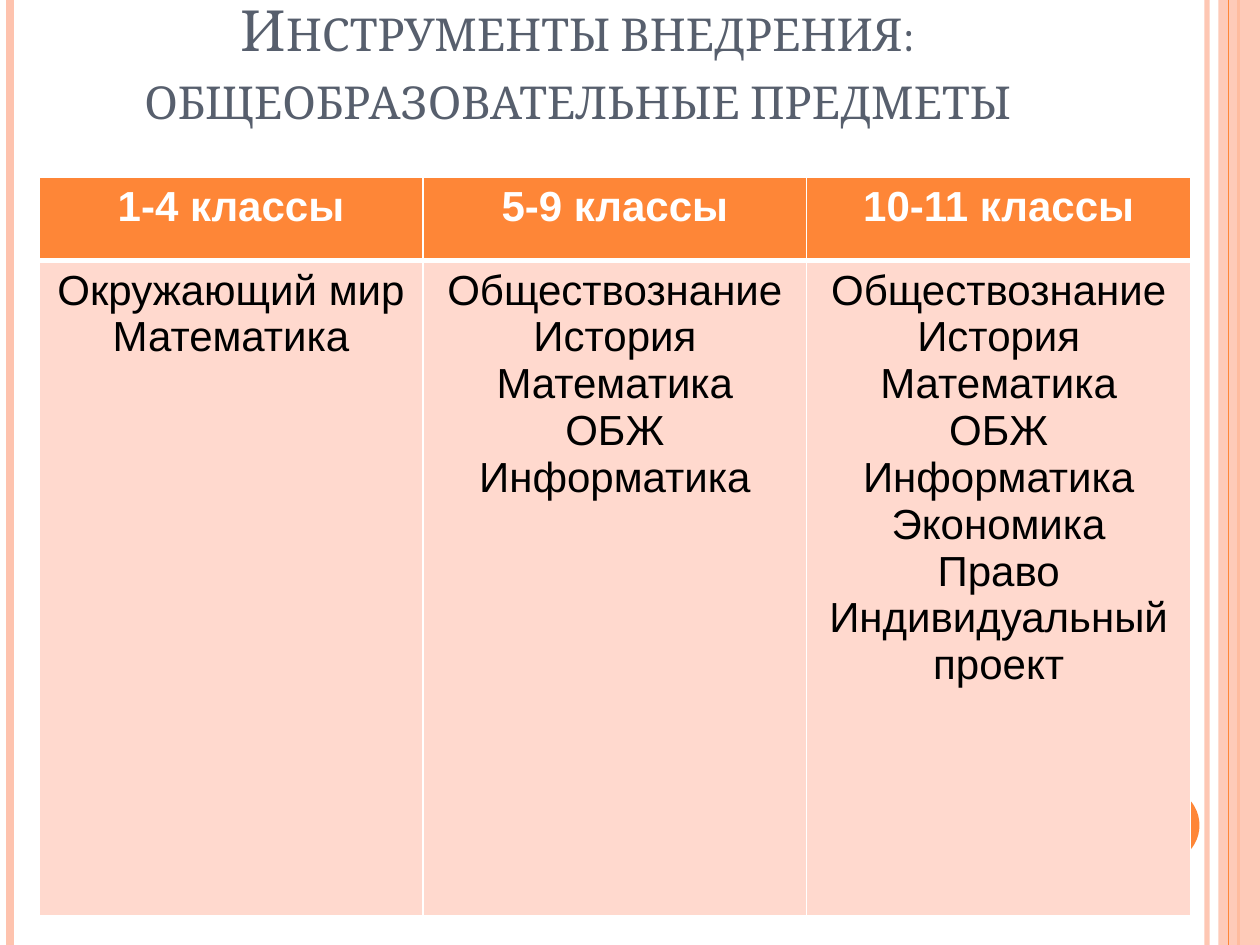
import pptx
import pptx.dml.color
import pptx.enum.shapes
import pptx.enum.text
import pptx.oxml
import pptx.oxml.ns
import pptx.util
from lxml import etree
from pptx.util import Inches

RGBColor = pptx.dml.color.RGBColor
ORANGE = RGBColor(0xFE, 0x86, 0x37)
PEACH = RGBColor(0xFE, 0xC3, 0xAE)
PALE_PEACH = RGBColor(0xFF, 0xD9, 0xCE)
SLATE = RGBColor(0x57, 0x5F, 0x6D)
WHITE = RGBColor(0xFF, 0xFF, 0xFF)
BLACK = RGBColor(0x00, 0x00, 0x00)

SLIDE_HEIGHT = 7.5
TITLE = "Инструменты внедрения: общеобразовательные предметы"
MIDDLE_SCHOOL = ["Обществознание", "История", "Математика", "ОБЖ", "Информатика"]
SUBJECTS = {
    "1-4 классы": ["Окружающий мир", "Математика"],
    "5-9 классы": MIDDLE_SCHOOL,
    "10-11 классы": MIDDLE_SCHOOL + ["Экономика", "Право", "Индивидуальный проект"],
}


def set_opacity(color_owner, percent):
    color = color_owner.find(".//" + pptx.oxml.ns.qn("a:srgbClr"))
    alpha = etree.SubElement(color, pptx.oxml.ns.qn("a:alpha"))
    alpha.set("val", str(percent * 1000))


def add_vertical_line(slide, x, color, width, opacity=100):
    line = slide.shapes.add_connector(
        pptx.enum.shapes.MSO_CONNECTOR.STRAIGHT,
        Inches(x), 0, Inches(x), Inches(SLIDE_HEIGHT))
    line.line.color.rgb = color
    line.line.width = pptx.util.Pt(width)
    if opacity < 100:
        set_opacity(line.line._ln, opacity)
    etree.SubElement(line._element.spPr, pptx.oxml.ns.qn("a:effectLst"))


def add_plain_shape(slide, kind, left, top, width, height, color):
    shape = slide.shapes.add_shape(
        kind, Inches(left), Inches(top), Inches(width), Inches(height))
    shape.shadow.inherit = False
    shape.fill.solid()
    shape.fill.fore_color.rgb = color
    shape.line.fill.background()
    return shape


def add_decoration(slide):
    shapes = pptx.enum.shapes.MSO_SHAPE
    add_vertical_line(slide, 9.58, PEACH, 3, opacity=93)
    add_vertical_line(slide, 0.08, PEACH, 4.5)
    add_vertical_line(slide, 9.83, ORANGE, 1.5)
    band = add_plain_shape(slide, shapes.RECTANGLE, 9.67, 0, 0.33, SLIDE_HEIGHT, PEACH)
    set_opacity(band._element.spPr, 87)
    add_vertical_line(slide, 9.75, ORANGE, 0.75)
    add_plain_shape(slide, shapes.OVAL, 8.92, 6.25, 0.6, 0.6, ORANGE)


def add_run(paragraph, text, font_name, size, color, bold=False):
    paragraph.alignment = pptx.enum.text.PP_ALIGN.CENTER
    run = paragraph.add_run()
    run.text = text
    run.font.name = font_name
    run.font.size = pptx.util.Pt(size)
    run.font.color.rgb = color
    run.font.bold = bold
    return run


def fill_title(slide):
    title = slide.shapes.title
    title.left, title.top = Inches(0.5), Inches(0.3)
    title.width, title.height = Inches(8.17), Inches(0.79)
    frame = title.text_frame
    frame.word_wrap = True
    frame.auto_size = pptx.enum.text.MSO_AUTO_SIZE.NONE
    frame.vertical_anchor = pptx.enum.text.MSO_ANCHOR.BOTTOM
    run = add_run(frame.paragraphs[0], TITLE, "Cambria", 32.4, SLATE)
    run.font._element.set("cap", "small")


def set_borders(cell, **widths):
    """Draw white borders; keys are the sides lnL, lnR, lnT, lnB in points."""
    properties = cell._tc.get_or_add_tcPr()
    for index, (side, width) in enumerate(widths.items()):
        border = pptx.oxml.parse_xml(
            f'<a:{side} {pptx.oxml.ns.nsdecls("a")} w="{pptx.util.Pt(width)}">'
            f'<a:solidFill><a:srgbClr val="{WHITE}"/></a:solidFill></a:{side}>')
        properties.insert(index, border)


def fill_cell(cell, lines, fill, color, bold, bottom_border):
    cell.fill.solid()
    cell.fill.fore_color.rgb = fill
    set_borders(cell, lnL=1, lnR=1, lnT=1, lnB=bottom_border)
    frame = cell.text_frame
    for index, line in enumerate(lines):
        paragraph = frame.add_paragraph() if index else frame.paragraphs[0]
        add_run(paragraph, line, "Arial", 24, color, bold)


def add_subject_table(slide):
    table = slide.shapes.add_table(
        2, len(SUBJECTS), Inches(0.31), Inches(1.41), Inches(9.14), Inches(5.86)).table
    table.rows[0].height = Inches(0.66)
    table.rows[1].height = Inches(5.2)
    for column, (grades, subjects) in enumerate(SUBJECTS.items()):
        fill_cell(table.cell(0, column), [grades], ORANGE, WHITE, True, 3)
        fill_cell(table.cell(1, column), subjects, PALE_PEACH, BLACK, False, 1)


def main():
    presentation = pptx.Presentation()
    presentation.slide_width = Inches(10)
    presentation.slide_height = Inches(SLIDE_HEIGHT)
    slide = presentation.slides.add_slide(presentation.slide_layouts[5])
    add_decoration(slide)
    fill_title(slide)
    add_subject_table(slide)
    presentation.save("out.pptx")


if __name__ == "__main__":
    main()
